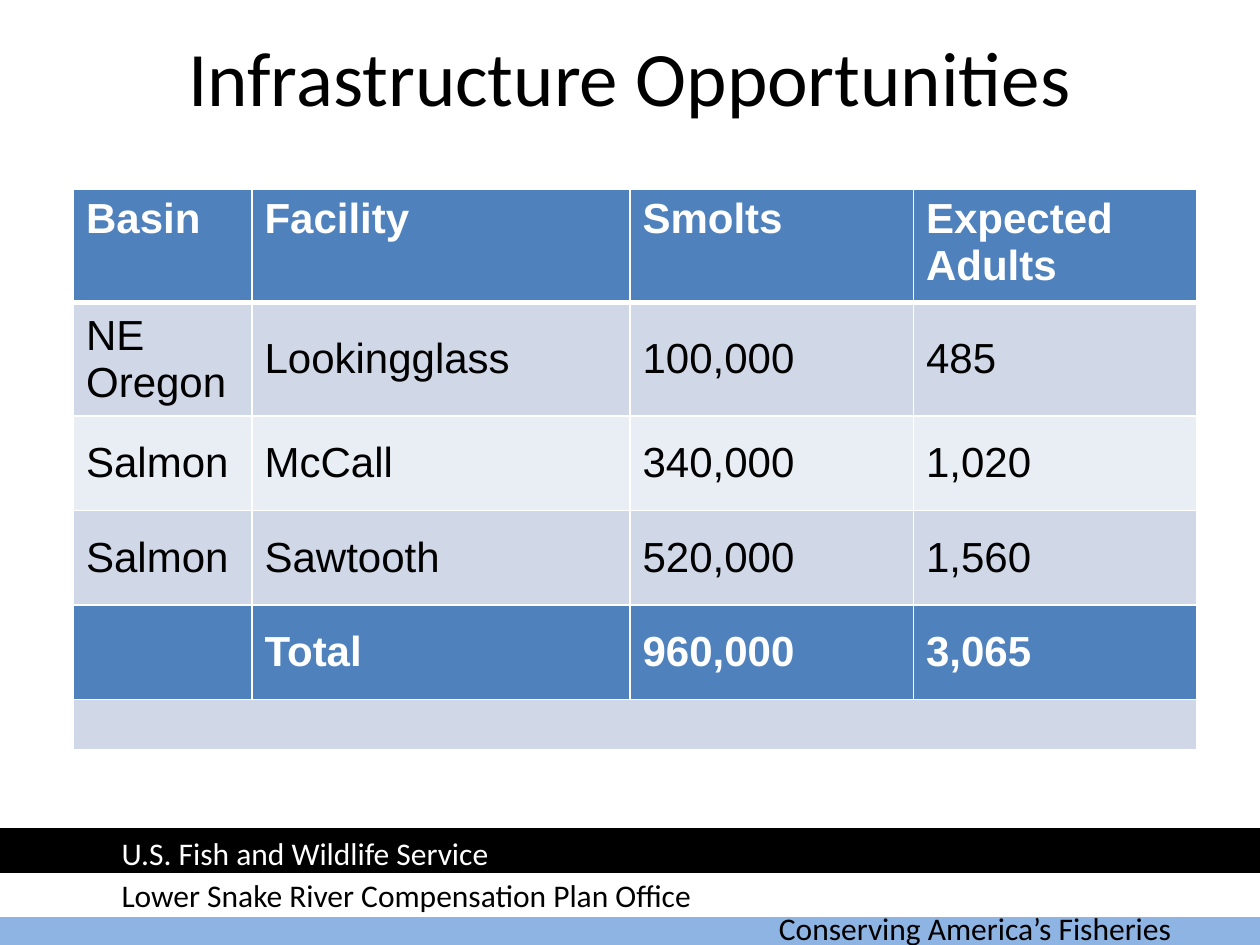
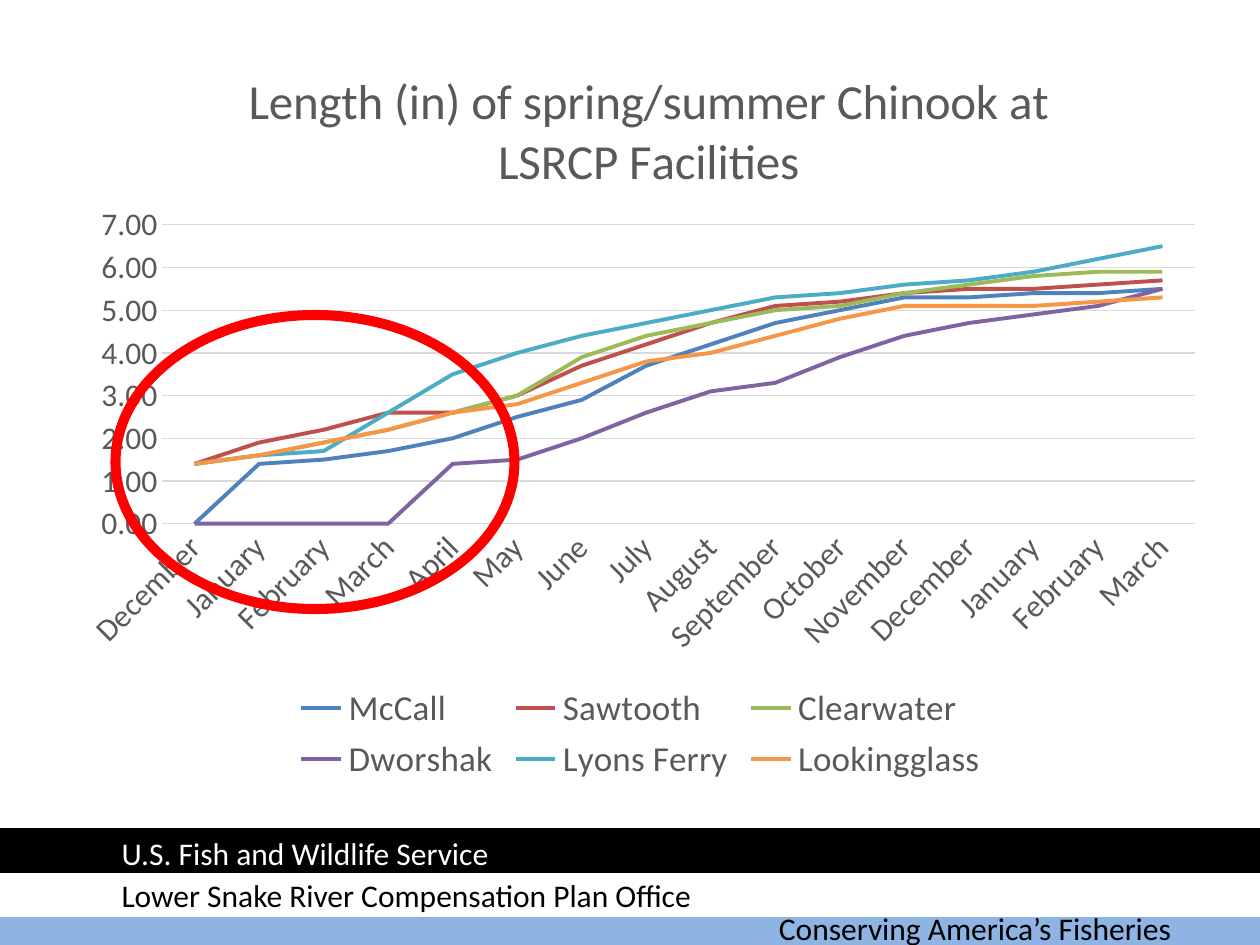
from lxml.etree import SubElement
from pptx import Presentation
from pptx.chart.data import CategoryChartData
from pptx.dml.color import RGBColor
from pptx.enum.chart import XL_CHART_TYPE, XL_LEGEND_POSITION, XL_TICK_MARK
from pptx.enum.shapes import MSO_SHAPE
from pptx.enum.text import MSO_ANCHOR, PP_ALIGN
from pptx.oxml import parse_xml
from pptx.oxml.ns import nsdecls, qn
from pptx.util import Inches, Pt

UNIT = Inches(1) / 6  # the slide is a grid of 60 columns by 45 rows
COLORS = {
    "black": "000000", "white": "FFFFFF", "sky": "8EB4E3", "red": "FF0000",
    "header": "4F81BD", "band": "D0D8E8", "light": "E9EDF4",
    "label": "595959", "grid": "D9D9D9",
}
SERIES_COLORS = ["4F81BD", "C0504D", "9BBB59", "8064A2", "4BACC6", "F79646"]

BANDS = [(43, "sky"), (41.6, "white"), (39.5, "black")]
FOOTERS = [
    (36.5, 43, 22, "Conserving America’s Fisheries", "black"),
    (5.2, 39.4, 25, "U.S. Fish and Wildlife Service", "white"),
    (5.2, 41.4, 30, "Lower Snake River Compensation Plan Office", "black"),
]

FACILITY_ROWS = [
    ("Basin", "Facility", "Smolts", "Expected Adults"),
    ("NE Oregon", "Lookingglass", "100,000", "485"),
    ("Salmon", "McCall", "340,000", "1,020"),
    ("Salmon", "Sawtooth", "520,000", "1,560"),
    ("", "Total", "960,000", "3,065"),
    ("", "", "", ""),
]
ROW_FILLS = ["header", "band", "light", "band", "header", "band"]

MONTHS = ["December", "January", "February", "March", "April", "May", "June", "July", "August",
          "September", "October", "November", "December", "January", "February", "March"]
LENGTHS = {
    "McCall": [0, 1.4, 1.5, 1.7, 2, 2.5, 2.9, 3.7, 4.2, 4.7, 5, 5.3, 5.3, 5.4, 5.4, 5.5],
    "Sawtooth": [1.4, 1.9, 2.2, 2.6, 2.6, 3, 3.7, 4.2, 4.7, 5.1, 5.2, 5.4, 5.5, 5.5, 5.6, 5.7],
    "Clearwater": [1.4, 1.6, 1.9, 2.2, 2.6, 3, 3.9, 4.4, 4.7, 5, 5.1, 5.4, 5.6, 5.8, 5.9, 5.9],
    "Dworshak": [0, 0, 0, 0, 1.4, 1.5, 2, 2.6, 3.1, 3.3, 3.9, 4.4, 4.7, 4.9, 5.1, 5.5],
    "Lyons Ferry": [1.4, 1.6, 1.7, 2.6, 3.5, 4, 4.4, 4.7, 5, 5.3, 5.4, 5.6, 5.7, 5.9, 6.2, 6.5],
    "Lookingglass": [1.4, 1.6, 1.9, 2.2, 2.6, 2.8, 3.3, 3.8, 4, 4.4, 4.8, 5.1, 5.1, 5.1, 5.2, 5.3],
}


def rgb(name):
    return RGBColor.from_string(COLORS.get(name, name))


def units(*counts):
    return [round(count * UNIT) for count in counts]


def style_font(font, size, color="label", name="Calibri", bold=False):
    font.size, font.name, font.bold = Pt(size), name, bold
    font.color.rgb = rgb(color)


def style_line(line, color, width):
    line.color.rgb = rgb(color)
    line.width = Pt(width)


def write(frame, text, align=PP_ALIGN.LEFT, **font_style):
    paragraph = frame.paragraphs[0]
    paragraph.alignment = align
    run = paragraph.add_run()
    run.text = text
    style_font(run.font, **font_style)


def set_borders(cell, top, bottom):
    """Draw white cell borders; call before the cell is filled."""
    properties = cell._tc.get_or_add_tcPr()
    for side, width in {"L": 1, "R": 1, "T": top, "B": bottom}.items():
        border = SubElement(properties, qn(f"a:ln{side}"), w=str(Pt(width)))
        fill = SubElement(border, qn("a:solidFill"))
        SubElement(fill, qn("a:srgbClr"), val=COLORS["white"])


def layout_xml(inner=False, **shares):
    """Chart layout given as shares of the chart's size."""
    items = {"layoutTarget": "inner"} if inner else {}
    items |= {f"{key}Mode": "edge" for key in "xy"} | shares
    body = "".join(f'<c:{tag} val="{value}"/>' for tag, value in items.items())
    return parse_xml(f'<c:layout {nsdecls("c")}><c:manualLayout>{body}</c:manualLayout></c:layout>')


class Deck:
    def __init__(self):
        self.presentation = Presentation()
        self.presentation.slide_width, self.presentation.slide_height = units(60, 45)
        self.slide = None

    def new_slide(self):
        self.slide = self.presentation.slides.add_slide(self.presentation.slide_layouts[6])
        for row, color in BANDS:
            self.shape(MSO_SHAPE.RECTANGLE, 0, row, 60, 2, color, 2, fill=color)
        for column, row, width, text, color in FOOTERS:
            self.text(column, row, width, 2, text, size=18, color=color)

    def shape(self, kind, column, row, width, height, line, weight, fill=None):
        shape = self.slide.shapes.add_shape(kind, *units(column, row, width, height))
        shape.shadow.inherit = False
        style_line(shape.line, line, weight)
        if fill:
            shape.fill.solid()
            shape.fill.fore_color.rgb = rgb(fill)
        else:
            shape.fill.background()

    def text(self, column, row, width, height, text, anchor=MSO_ANCHOR.TOP, **style):
        frame = self.slide.shapes.add_textbox(*units(column, row, width, height)).text_frame
        frame.word_wrap = True
        frame.vertical_anchor = anchor
        write(frame, text, **style)

    def title(self, text):
        self.text(3, 1, 54, 5.2, text, MSO_ANCHOR.MIDDLE,
                  align=PP_ALIGN.CENTER, size=44, color="black")

    def table(self, column, row, widths, heights, rows, fills):
        table = self.slide.shapes.add_table(
            len(rows), len(widths), *units(column, row, sum(widths), sum(heights))).table
        for table_column, width in zip(table.columns, units(*widths)):
            table_column.width = width
        for table_row, height in zip(table.rows, units(*heights)):
            table_row.height = height
        for index, (texts, fill) in enumerate(zip(rows, fills)):
            strong = fill == "header"
            for position, text in enumerate(texts):
                cell = table.cell(index, position)
                set_borders(cell, top=3 if index == 1 else 1, bottom=3 if index == 0 else 1)
                cell.fill.solid()
                cell.fill.fore_color.rgb = rgb(fill)
                cell.vertical_anchor = MSO_ANCHOR.MIDDLE if index else MSO_ANCHOR.TOP
                if text:
                    write(cell.text_frame, text, size=24, name="Arial", bold=strong,
                          color="white" if strong else "black")
        return table

    def line_chart(self, column, row, width, height, title, categories, series):
        data = CategoryChartData(number_format="0.00")
        data.categories = categories
        for name, values in series.items():
            data.add_series(name, values)
        chart = self.slide.shapes.add_chart(
            XL_CHART_TYPE.LINE, *units(column, row, width, height), data).chart
        style_font(chart.font, 10, "black")

        chart.has_title = True
        write(chart.chart_title.text_frame, title, align=PP_ALIGN.CENTER, size=28)
        chart.has_legend = True
        chart.legend.position = XL_LEGEND_POSITION.BOTTOM
        chart.legend.include_in_layout = False
        style_font(chart.legend.font, 20)

        for axis in (chart.category_axis, chart.value_axis):
            axis.major_tick_mark = axis.minor_tick_mark = XL_TICK_MARK.NONE
            style_font(axis.tick_labels.font, 18)
        style_line(chart.category_axis.format.line, "grid", 0.75)
        chart.category_axis._element.find(qn("c:txPr")).find(qn("a:bodyPr")).set("rot", "-2700000")
        value_axis = chart.value_axis
        value_axis.minimum_scale, value_axis.maximum_scale, value_axis.major_unit = 0, 7, 1
        value_axis.format.line.fill.background()
        style_line(value_axis.major_gridlines.format.line, "grid", 0.75)
        value_axis.tick_labels.number_format = "0.00"
        value_axis.tick_labels.number_format_is_linked = False

        plot = chart.plots[0]
        plot.vary_by_categories = False
        for line, color in zip(plot.series, SERIES_COLORS):
            line.smooth = False
            style_line(line.format.line, color, 2.25)
        self.place_chart_parts(chart)

    def place_chart_parts(self, chart):
        area = chart._chartSpace.chart.plotArea
        for layout in area.findall(qn("c:layout")):
            area.remove(layout)
        area.insert(0, layout_xml(inner=True, x=0.086, y=0.266, w=0.894, h=0.39))
        title = chart.chart_title._element
        for layout in title.findall(qn("c:layout")):
            title.remove(layout)
        title.find(qn("c:tx")).addnext(layout_xml(x=0.153, y=0.05))


def main():
    deck = Deck()

    deck.new_slide()
    deck.title("Infrastructure Opportunities")
    table = deck.table(3.5, 9, [8.5, 18, 13.5, 13.5], [4, 4.1, 4.5, 4.5, 4.5, 2.4],
                       FACILITY_ROWS, ROW_FILLS)
    table.cell(5, 0).merge(table.cell(5, 3))

    deck.new_slide()
    deck.line_chart(3, 1, 55, 36.5, "Length (in) of spring/summer Chinook at LSRCP Facilities",
                    MONTHS, LENGTHS)
    deck.shape(MSO_SHAPE.OVAL, 5.5, 15, 19, 14, "red", 5.75)

    deck.presentation.save("out.pptx")


if __name__ == "__main__":
    main()
